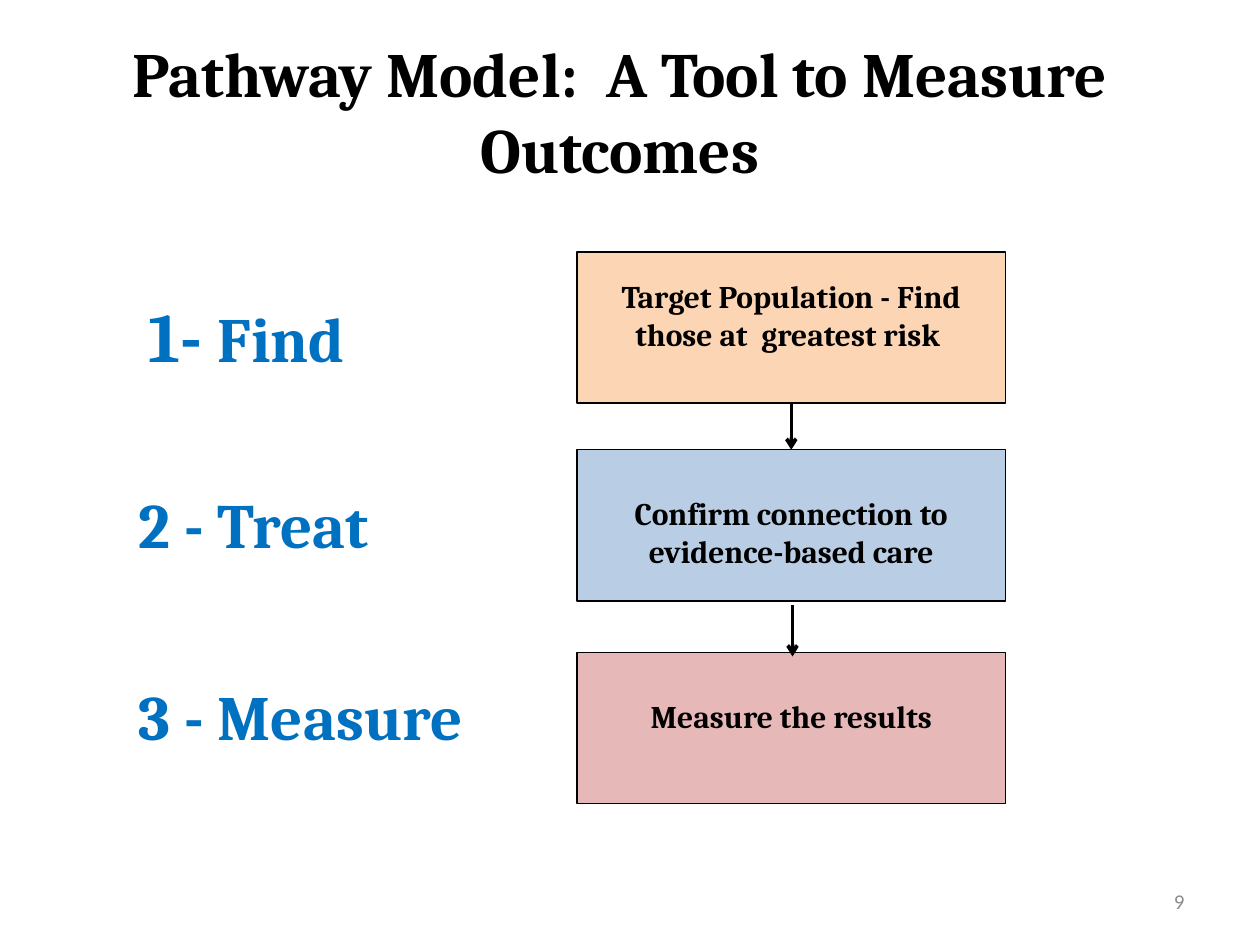
from lxml import etree
from pptx import Presentation
from pptx.dml.color import RGBColor
from pptx.enum.shapes import MSO_CONNECTOR as Connector, MSO_SHAPE as Shape
from pptx.enum.text import MSO_ANCHOR as Anchor, PP_ALIGN as Align
from pptx.oxml.ns import qn
from pptx.util import Inches, Pt

BLACK, BLUE, GRAY = "000000", "0070C0", "8C8C8C"
BOX_LEFT, BOX_WIDTH, BOX_HEIGHT = 4.58, 3.4, 1.2
STEPS = [
    (2, "FCD5B5", 0.2, "Target Population - Find those at  greatest risk "),
    (3.57, "B9CDE5", 0.35, "Confirm connection to evidence-based care"),
    (5.18, "E6B9B8", 0.35, "Measure the results"),
]
LABELS = [
    ((1.08, 2.27, 2.08, 0.77), [("1- ", 40), ("Find", 36)]),
    ((1, 3.8, 2.36, 0.71), [("2 - Treat", 36)]),
    ((1, 5.33, 3.58, 0.71), [("3 - Measure", 36)]),
]
ARROWS = [(6.28, 3.2, 3.57), (6.29, 4.8, 5.21)]


def color(value):
    return RGBColor.from_string(value)


def set_text(shape, runs, hue, align=Align.LEFT, anchor=Anchor.TOP, name="Cambria", bold=True):
    frame = shape.text_frame
    frame.word_wrap = True
    frame.vertical_anchor = anchor
    paragraph = frame.paragraphs[0]
    paragraph.alignment = align
    for text, size in runs:
        run = paragraph.add_run()
        run.text = text
        for key, value in {"name": name, "size": Pt(size), "bold": bold}.items():
            setattr(run.font, key, value)
        run.font.color.rgb = color(hue)


def add_text(slide, place, runs, hue, **format_values):
    shape = slide.shapes.add_textbox(*map(Inches, place))
    set_text(shape, runs, hue, **format_values)


def add_step(slide, top, fill, top_margin, text):
    place = (BOX_LEFT, top, BOX_WIDTH, BOX_HEIGHT)
    shape = slide.shapes.add_shape(Shape.RECTANGLE, *map(Inches, place))
    shape.shadow.inherit = False
    shape.fill.solid()
    shape.fill.fore_color.rgb = color(fill)
    shape.line.color.rgb = color(BLACK)
    shape.line.width = Pt(0.75)
    shape.text_frame.margin_top = Inches(top_margin)
    set_text(shape, [(text, 18)], BLACK, align=Align.CENTER)


def add_arrow(slide, x, top, bottom):
    ends = map(Inches, (x, top, x, bottom))
    connector = slide.shapes.add_connector(Connector.STRAIGHT, *ends)
    connector.line.color.rgb = color(BLACK)
    connector.line.width = Pt(2)
    properties = connector.line._get_or_add_ln()
    etree.SubElement(properties, qn("a:tailEnd"), type="arrow")
    etree.SubElement(connector._element.spPr, qn("a:effectLst"))


def main():
    presentation = Presentation()
    presentation.slide_width = Inches(10)
    presentation.slide_height = Inches(7.5)
    slide = presentation.slides.add_slide(presentation.slide_layouts[6])
    add_text(slide, (0.42, 0.25, 9, 1.25), [("Pathway Model:  A Tool to Measure Outcomes", 36)],
             BLACK, align=Align.CENTER, anchor=Anchor.MIDDLE)
    for step in STEPS:
        add_step(slide, *step)
    for arrow in ARROWS:
        add_arrow(slide, *arrow)
    for place, runs in LABELS:
        add_text(slide, place, runs, BLUE)
    add_text(slide, (7.17, 6.95, 2.33, 0.4), [("9", 12)], GRAY,
             align=Align.RIGHT, anchor=Anchor.MIDDLE, name="Calibri", bold=False)
    presentation.save("out.pptx")


if __name__ == "__main__":
    main()
